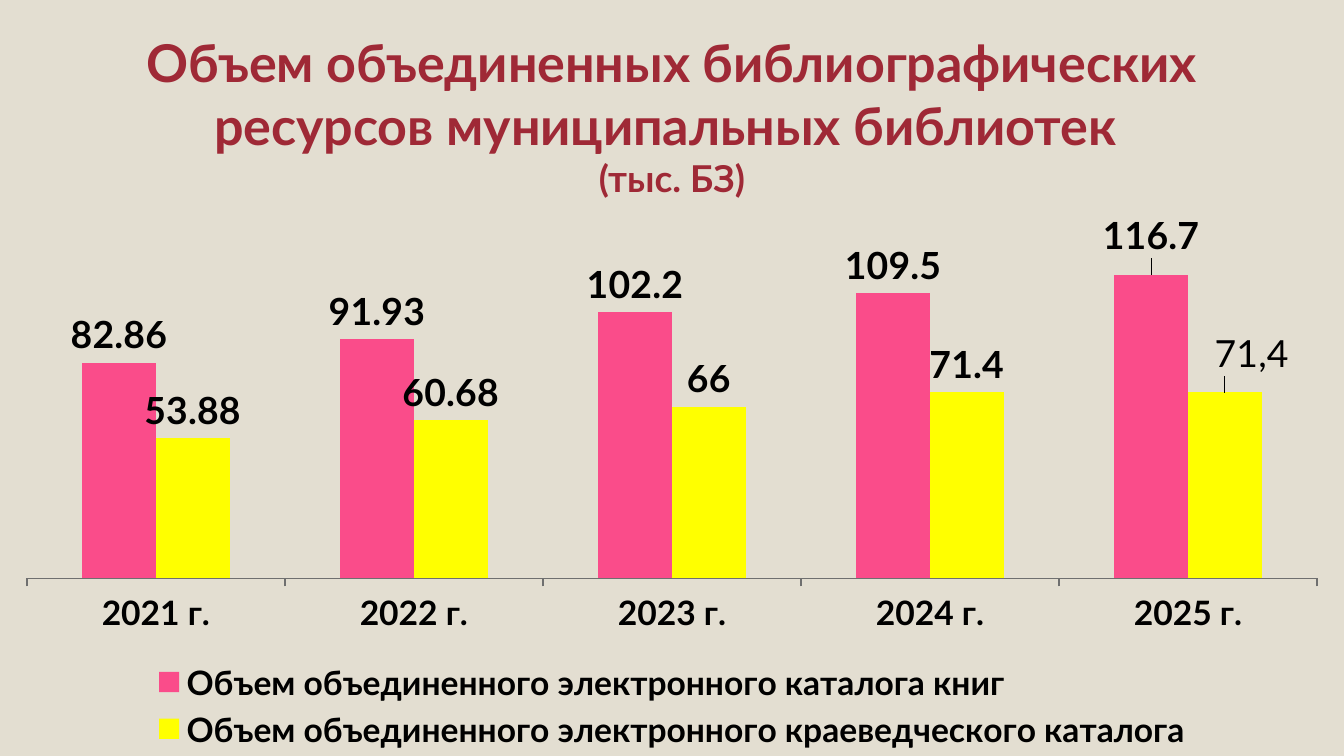
from pptx import Presentation
from pptx.chart.data import CategoryChartData
from pptx.dml.color import RGBColor
from pptx.enum.chart import XL_CHART_TYPE as ChartType
from pptx.enum.chart import XL_LABEL_POSITION as LabelPosition
from pptx.enum.chart import XL_LEGEND_POSITION as LegendPosition
from pptx.enum.chart import XL_TICK_MARK as TickMark
from pptx.enum.text import MSO_ANCHOR as Anchor
from pptx.enum.text import PP_ALIGN as Align
from pptx.oxml import parse_xml
from pptx.oxml.ns import nsdecls
from pptx.util import Pt

COLORS = {
    "background": "E3DED1",
    "title": "9F2936",
    "text": "000000",
    "axis": "6F6F6F",
    "books": "FA4C8A",
    "local": "FFFF00",
}
YEARS = ["2021 г.", "2022 г.", "2023 г.", "2024 г.", "2025 г."]
SERIES = [
    ("Объем объединенного электронного каталога книг", "books",
     [82.86, 91.93, 102.2, 109.5, 116.7]),
    ("Объем объединенного электронного краеведческого каталога", "local",
     [53.88, 60.68, 66, 71.4, 71.4]),
]


def make_layout(target=None, **values):
    tags = f'<c:layoutTarget val="{target}"/>' if target else ""
    if "w" in values:
        tags += '<c:xMode val="edge"/><c:yMode val="edge"/>'
    tags += "".join(f'<c:{name} val="{value}"/>' for name, value in values.items())
    return parse_xml(
        f'<c:layout {nsdecls("c")}><c:manualLayout>{tags}</c:manualLayout></c:layout>')


def replace_layout(element, position, layout):
    for old in element.findall(layout.tag):
        element.remove(old)
    element.insert(position, layout)


class SlideBuilder:
    """Holds the style and the current slide."""

    font_name = "Lato"

    def __init__(self, slide):
        self.slide = slide
        fill = slide.background.fill
        fill.solid()
        fill.fore_color.rgb = self.color("background")

    def color(self, name):
        return RGBColor.from_string(COLORS[name])

    def style_font(self, font, size, color="text", bold=True):
        font.name = self.font_name
        font.size = Pt(size)
        font.bold = bold
        font.color.rgb = self.color(color)

    def add_title(self, left, top, width, height, text, sizes):
        shape = self.slide.shapes.add_textbox(Pt(left), Pt(top), Pt(width), Pt(height))
        text_frame = shape.text_frame
        text_frame.word_wrap = True
        text_frame.vertical_anchor = Anchor.TOP
        text_frame.margin_top = Pt(16.4)
        text_frame.text = text
        paragraph = text_frame.paragraphs[0]
        paragraph.alignment = Align.CENTER
        for run, size in zip(paragraph.runs, sizes):
            self.style_font(run.font, size, "title")

    def add_column_chart(self, left, top, width, height, categories, series_list):
        data = CategoryChartData()
        data.categories = categories
        for name, _, values in series_list:
            data.add_series(name, values)
        chart = self.slide.shapes.add_chart(
            ChartType.COLUMN_CLUSTERED, Pt(left), Pt(top), Pt(width), Pt(height), data).chart
        chart.has_title = False
        self.style_font(chart.font, 18)

        category_axis = chart.category_axis
        category_axis.major_tick_mark = TickMark.OUTSIDE
        category_axis.format.line.color.rgb = self.color("axis")
        category_axis.format.line.width = Pt(0.75)
        self.style_font(category_axis.tick_labels.font, 18)
        value_axis = chart.value_axis
        value_axis.minimum_scale, value_axis.maximum_scale = 0, 140
        value_axis.has_major_gridlines = False
        value_axis.visible = False

        plot = chart.plots[0]
        plot.gap_width, plot.overlap = 150, 0
        plot.vary_by_categories = False
        for series, (_, color, _) in zip(plot.series, series_list):
            series.format.fill.solid()
            series.format.fill.fore_color.rgb = self.color(color)
            series.invert_if_negative = False
            labels = series.data_labels
            labels.show_value = True
            labels.position = LabelPosition.OUTSIDE_END
            self.style_font(labels.font, 20)

        chart.has_legend = True
        legend = chart.legend
        legend.position = LegendPosition.BOTTOM
        legend.include_in_layout = False
        self.style_font(legend.font, 18)
        replace_layout(legend._element, 1, make_layout(x=0.11, y=0.82, w=0.78, h=0.18))
        plot_area = chart._chartSpace.chart.plotArea
        replace_layout(plot_area, 0, make_layout("inner", x=0.02, y=0.02, w=0.96, h=0.66))
        return chart

    def move_label(self, series, index, x, y, text=None):
        label = series.points[index].data_label
        if text:
            label.text_frame.text = text
            run = label.text_frame.paragraphs[0].runs[0]
            self.style_font(run.font, 20, bold=False)
        else:
            self.style_font(label.font, 20)
        label.position = LabelPosition.OUTSIDE_END
        element = series.data_labels._element.dLbl_lst[0]
        replace_layout(element, 1, make_layout(x=x, y=y))


def main():
    presentation = Presentation()
    presentation.slide_width, presentation.slide_height = Pt(720), Pt(405)
    builder = SlideBuilder(presentation.slides.add_slide(presentation.slide_layouts[6]))
    builder.add_title(
        36, 0, 648, 104.4,
        "Объем объединенных библиографических ресурсов муниципальных библиотек \v(тыс. БЗ)",
        (27.9, 19.8))
    chart = builder.add_column_chart(0, 108.7, 720, 295.9, YEARS, SERIES)
    books, local = chart.plots[0].series
    last = len(YEARS) - 1
    builder.move_label(books, last, 0, -0.02)
    builder.move_label(local, last, 0.02, -0.02, "71,4")
    presentation.save("out.pptx")


if __name__ == "__main__":
    main()
